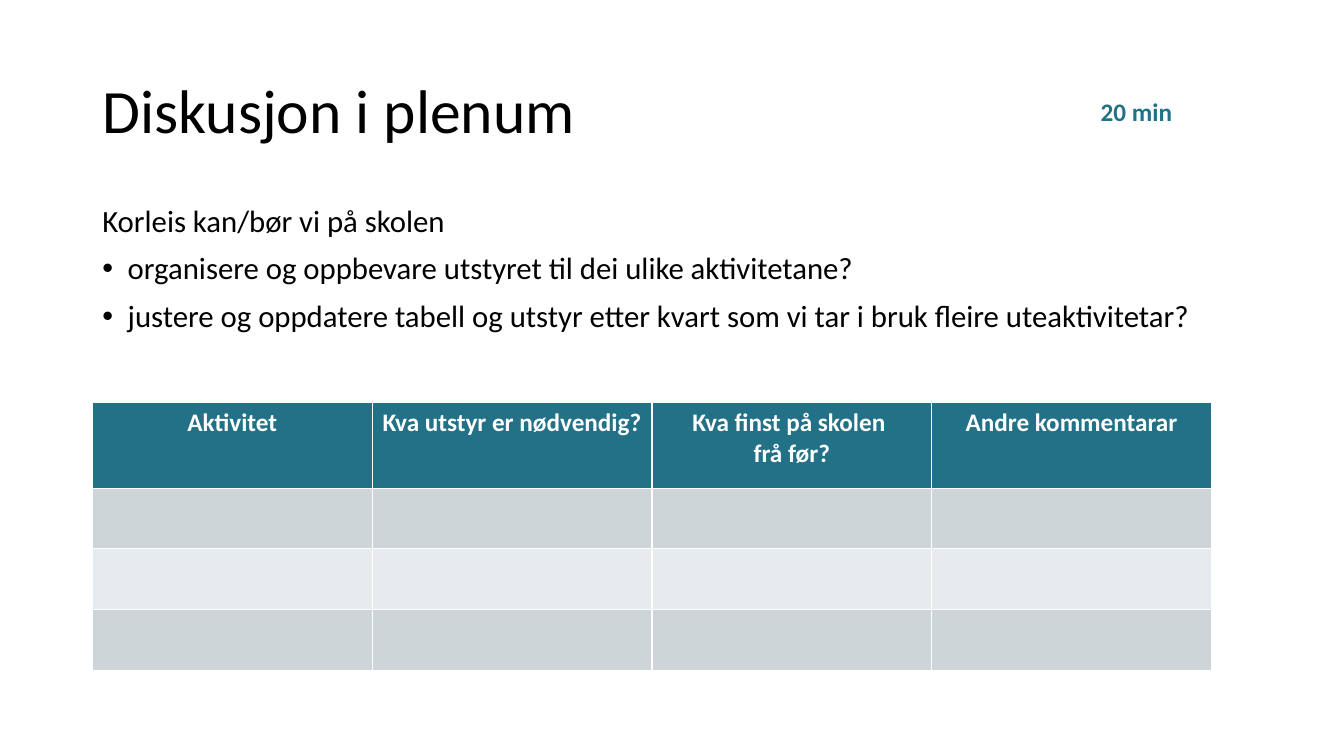
from lxml import etree
from pptx import Presentation
from pptx.dml.color import RGBColor
from pptx.enum.text import MSO_ANCHOR, MSO_AUTO_SIZE, PP_ALIGN
from pptx.oxml.ns import qn
from pptx.util import Cm, Pt

LEFT, CENTER = PP_ALIGN.LEFT, PP_ALIGN.CENTER
MIDDLE = MSO_ANCHOR.MIDDLE
NO_AUTOFIT = MSO_AUTO_SIZE.NONE

BLACK = RGBColor(0x00, 0x00, 0x00)
WHITE = RGBColor(0xFF, 0xFF, 0xFF)
TEAL = RGBColor(0x22, 0x71, 0x86)
BAND_DARK = RGBColor(0xCD, 0xD5, 0xD9)
BAND_LIGHT = RGBColor(0xE8, 0xEB, 0xED)

FONT = "Calibri"
TITLE_ONLY = 5
MARGIN = Cm(2.33)
BODY_WIDTH = Cm(29.21)
BULLET_INDENT = Cm(0.64)

QUESTIONS = [
    "organisere og oppbevare utstyret til dei ulike aktivitetane?",
    "justere og oppdatere tabell og utstyr etter kvart som vi tar i bruk fleire uteaktivitetar?",
]
HEADINGS = [
    "Aktivitet",
    "Kva utstyr er nødvendig?",
    "Kva finst på skolen \vfrå før?",
    "Andre kommentarar",
]


def style(para, size, color, bold=False, align=LEFT):
    para.alignment = align
    para.font.name = FONT
    para.font.size = Pt(size)
    para.font.color.rgb = color
    para.font.bold = bold


def add_bullet(para):
    properties = para._p.get_or_add_pPr()
    properties.set("marL", str(BULLET_INDENT))
    properties.set("indent", str(-BULLET_INDENT))
    etree.SubElement(properties, qn("a:buFont")).set("typeface", "Arial")
    etree.SubElement(properties, qn("a:buChar")).set("char", "•")


def add_text_frame(page, left, top, width, height):
    frame = page.shapes.add_textbox(left, top, width, height).text_frame
    frame.word_wrap = True
    return frame


def place_title(page, left, top, width, height):
    title = page.shapes.title
    title.left, title.top, title.width, title.height = left, top, width, height
    frame = title.text_frame
    frame.text = "Diskusjon i plenum"
    frame.auto_size = NO_AUTOFIT
    frame.vertical_anchor = MIDDLE
    para = frame.paragraphs[0]
    para.line_spacing = 0.9
    style(para, 44, BLACK)


def add_duration(page, left, top, width, height):
    para = add_text_frame(page, left, top, width, height).paragraphs[0]
    para.text = "20 min"
    para.line_spacing = 0.9
    para.space_before = Pt(10)
    style(para, 18, TEAL, bold=True, align=CENTER)


def add_questions(page, left, top, width, height):
    frame = add_text_frame(page, left, top, width, height)
    frame.text = "\n".join(["Korleis kan/bør vi på skolen", *QUESTIONS])
    for index, para in enumerate(frame.paragraphs):
        if index > 0:
            add_bullet(para)
        para.line_spacing = 0.9
        para.space_before = Pt(10)
        style(para, 22, BLACK)


def add_activity_table(page, left, top, width, header_height, row_height, row_count):
    """Draw a header row above row_count empty, banded rows."""
    height = header_height + row_count * row_height
    table = page.shapes.add_table(
        row_count + 1, len(HEADINGS), left, top, width, height).table
    for index, row in enumerate(table.rows):
        row.height = row_height if index else header_height
        band = BAND_DARK if index % 2 else BAND_LIGHT
        for cell in row.cells:
            cell.fill.solid()
            cell.fill.fore_color.rgb = band if index else TEAL
    for cell, heading in zip(table.rows[0].cells, HEADINGS):
        para = cell.text_frame.paragraphs[0]
        para.text = heading
        style(para, 18, WHITE, bold=True, align=CENTER)


def main():
    deck = Presentation()
    deck.slide_width, deck.slide_height = Cm(33.87), Cm(19.05)
    page = deck.slides.add_slide(deck.slide_layouts[TITLE_ONLY])
    place_title(page, MARGIN, Cm(1.01), BODY_WIDTH, Cm(3.68))
    add_duration(page, Cm(27.08), Cm(2.39), Cm(3.12), Cm(0.97))
    add_questions(page, MARGIN, Cm(5.07), BODY_WIDTH, Cm(4.5))
    add_activity_table(page, MARGIN, Cm(10.14), Cm(28.2), Cm(2.16), Cm(1.53), 3)
    deck.save("out.pptx")


if __name__ == "__main__":
    main()
